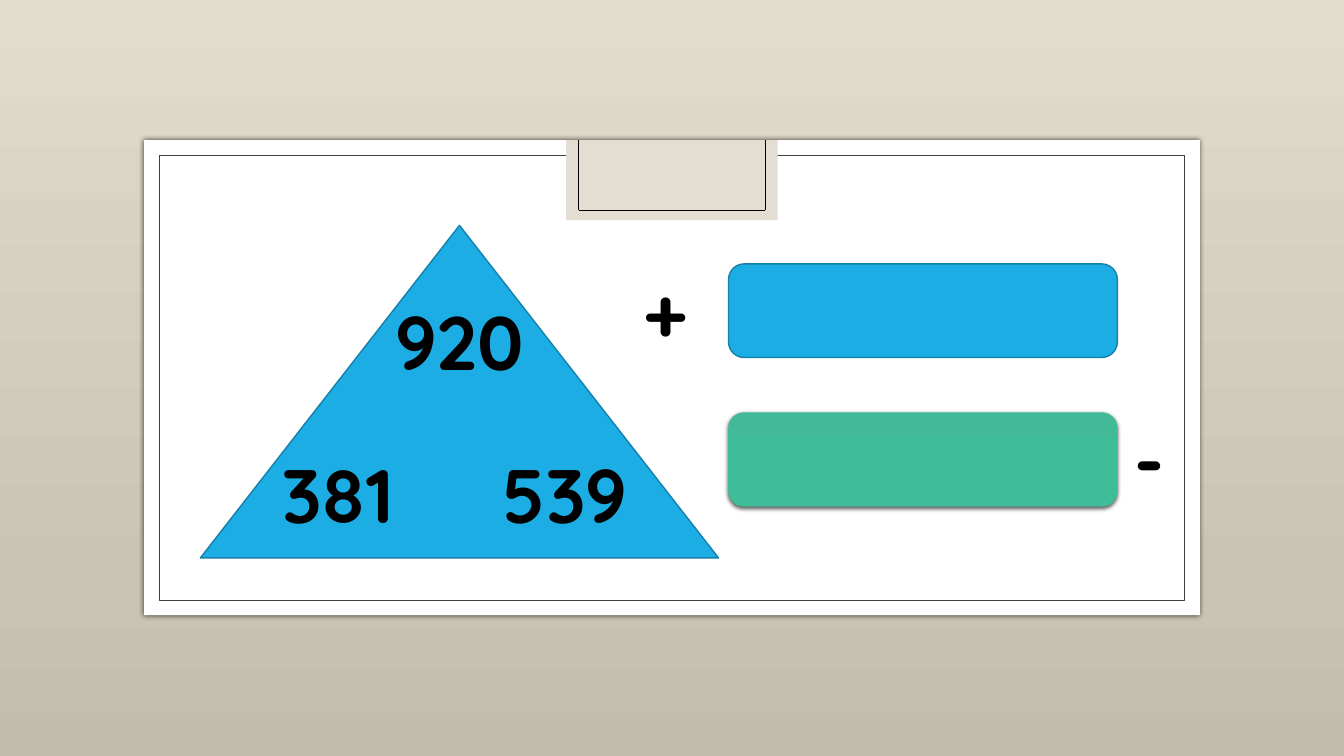
from lxml import etree
from pptx import Presentation
from pptx.dml.color import RGBColor
from pptx.enum.shapes import MSO_CONNECTOR, MSO_SHAPE
from pptx.enum.text import MSO_ANCHOR, MSO_AUTO_SIZE, PP_ALIGN
from pptx.oxml import parse_xml
from pptx.oxml.ns import nsdecls, qn
from pptx.util import Cm, Pt

RECTANGLE = MSO_SHAPE.RECTANGLE
ROUNDED = MSO_SHAPE.ROUNDED_RECTANGLE
TRIANGLE = MSO_SHAPE.ISOSCELES_TRIANGLE
STRAIGHT = MSO_CONNECTOR.STRAIGHT
CENTER = PP_ALIGN.CENTER
TOP = MSO_ANCHOR.TOP
GROW = MSO_AUTO_SIZE.SHAPE_TO_FIT_TEXT

WHITE = RGBColor(0xFF, 0xFF, 0xFF)
BLACK = RGBColor(0x00, 0x00, 0x00)
GRAY = RGBColor(0x40, 0x40, 0x40)
SAND = RGBColor(0xE3, 0xDE, 0xD1)
BLUE = RGBColor(0x1C, 0xAD, 0xE4)
DARK_BLUE = RGBColor(0x15, 0x80, 0xA9)
GREEN = RGBColor(0x42, 0xBA, 0x97)
GREEN_STOPS = [(0, GREEN), (50, RGBColor(0x3F, 0xBC, 0x98)),
               (100, RGBColor(0x3E, 0xBB, 0x97))]
PAGE_STOPS = [(0, RGBColor(0xE2, 0xDC, 0xCA)), (77, RGBColor(0xCA, 0xC4, 0xB2)),
              (100, RGBColor(0xC2, 0xBC, 0xAC))]

FONT = "Quicksand"
PAGE_WIDTH, PAGE_HEIGHT = 33.87, 19.05
TEXT_HEIGHT = 2.57


def paint_gradient(fill, element, stops):
    fill.gradient()
    fill.gradient_angle = 270
    stop_list = element.find(".//" + qn("a:gsLst"))
    for stop in list(stop_list):
        stop_list.remove(stop)
    for position, color in stops:
        stop = etree.SubElement(stop_list, qn("a:gs"), pos=str(position * 1000))
        etree.SubElement(stop, qn("a:srgbClr"), val=str(color))


def add_shadow(shape, opacity, blur, distance, angle):
    effects = shape.element.spPr.find(qn("a:effectLst"))
    effects.append(parse_xml(
        f'<a:outerShdw {nsdecls("a")} blurRad="{Pt(blur)}" dist="{Pt(distance)}" '
        f'dir="{angle * 60000}" algn="ctr" rotWithShape="0"><a:srgbClr val="000000">'
        f'<a:alpha val="{opacity * 1000}"/></a:srgbClr></a:outerShdw>'))


def add_block(page, kind, box, fill=None, line=None, line_width=1):
    shape = page.shapes.add_shape(kind, *map(Cm, box))
    shape.shadow.inherit = False
    if fill is None:
        shape.fill.background()
    else:
        shape.fill.solid()
        shape.fill.fore_color.rgb = fill
    if line is None:
        shape.line.fill.background()
    else:
        shape.line.color.rgb = line
        shape.line.width = Pt(line_width)
    return shape


def add_label(page, text, left, top, width):
    label = page.shapes.add_textbox(Cm(left), Cm(top), Cm(width), Cm(TEXT_HEIGHT))
    frame = label.text_frame
    frame.text = text
    frame.word_wrap = False
    frame.auto_size = GROW
    frame.vertical_anchor = TOP
    para = frame.paragraphs[0]
    para.alignment = CENTER
    span = para.runs[0]
    span.font.name = FONT
    span.font.size = Pt(54)
    span.font.bold = True
    span.font.color.rgb = BLACK
    span._r.get_or_add_rPr().insert(0, parse_xml(
        f'<a:ln {nsdecls("a")} w="{Pt(0.75)}"><a:solidFill>'
        f'<a:srgbClr val="{WHITE}"/></a:solidFill></a:ln>'))


def add_card(page, box):
    left, top, width, height = box
    inset = 0.38
    card = add_block(page, RECTANGLE, box, WHITE)
    add_shadow(card, 66, 4, 0, 0)
    add_block(page, RECTANGLE,
              (left + inset, top + inset, width - 2 * inset, height - 2 * inset),
              line=GRAY, line_width=0.5)


def add_tab(page, box):
    left, top, width, height = box
    add_block(page, RECTANGLE, box, SAND)
    start, end = left + 0.31, left + width - 0.31
    bottom = top + height - 0.25
    for ends in ((start, top, start, bottom), (end, top, end, bottom),
                 (start, bottom, end, bottom)):
        edge = page.shapes.add_connector(STRAIGHT, *map(Cm, ends))
        edge.line.color.rgb = BLACK
        edge.line.width = Pt(0.5)
        etree.SubElement(edge.element.spPr, qn("a:effectLst"))


def add_number_triangle(page, box, numbers):
    left, top, width, height = box
    label_width = 4
    add_block(page, TRIANGLE, box, BLUE, DARK_BLUE)
    places = ((width / 2, 1.62), (3.47, 5.48), (9.18, 5.48))
    for number, (middle, drop) in zip(numbers, places):
        add_label(page, number, left + middle - label_width / 2, top + drop, label_width)


def add_answer_bars(page, box):
    left, top, width, height = box
    bar_height = 2.36
    lower = top + height - bar_height
    add_block(page, ROUNDED, (left, top, width, bar_height), BLUE, DARK_BLUE)
    minus_bar = add_block(page, ROUNDED, (left, lower, width, bar_height),
                          GREEN, GREEN, 0.5)
    paint_gradient(minus_bar.fill, minus_bar.element, GREEN_STOPS)
    add_shadow(minus_bar, 63, 3, 1, 90)
    add_label(page, "+", left - 2.43, top - 0.1, 1.68)
    add_label(page, "-", left + width + 0.15, lower - 0.1, 1.32)


def main():
    deck = Presentation()
    deck.slide_width, deck.slide_height = Cm(PAGE_WIDTH), Cm(PAGE_HEIGHT)
    page = deck.slides.add_slide(deck.slide_layouts[6])
    paint_gradient(page.background.fill, page.element, PAGE_STOPS)
    card_top = 3.53
    add_card(page, (3.63, card_top, 26.61, 11.97))
    tab_width = 5.33
    add_tab(page, ((PAGE_WIDTH - tab_width) / 2, card_top, tab_width, 2.02))
    add_number_triangle(page, (5.05, 5.68, 13.06, 8.38), ("920", "381", "539"))
    add_answer_bars(page, (18.36, 6.65, 9.8, 6.11))
    deck.save("out.pptx")


if __name__ == "__main__":
    main()
